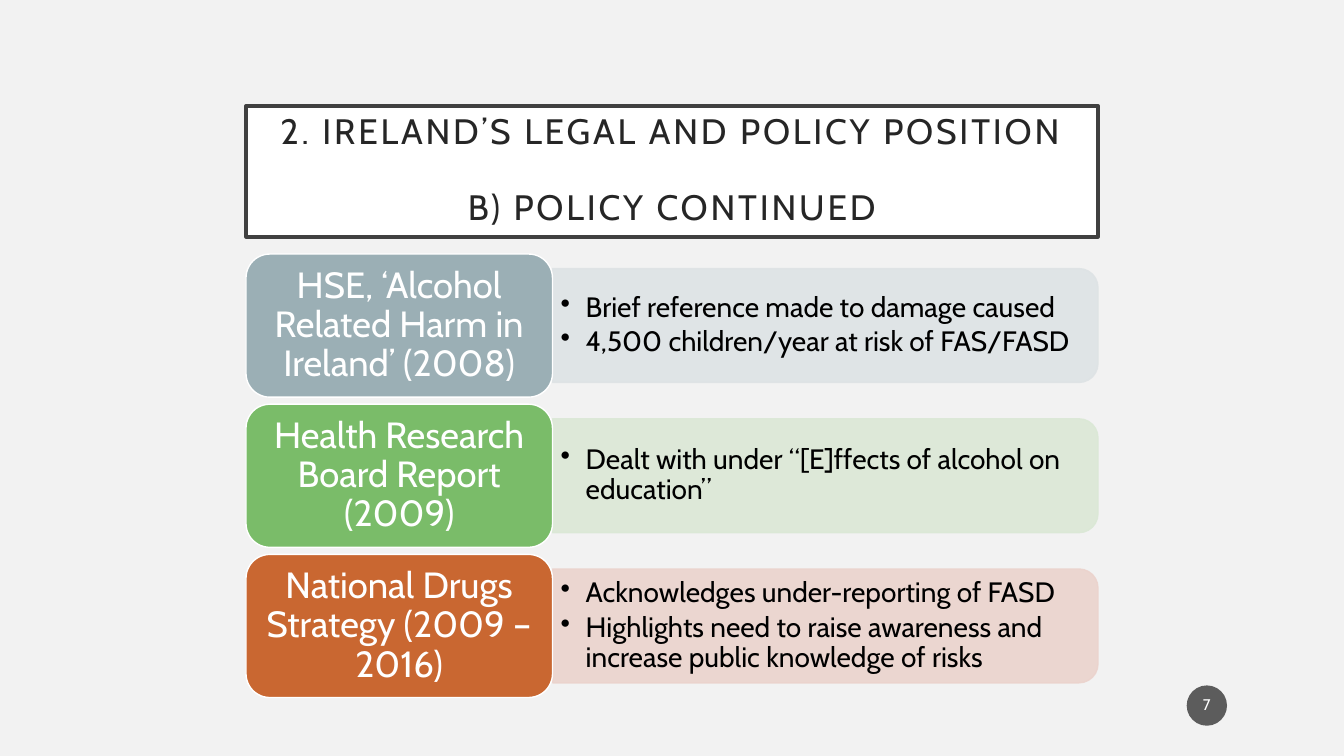
from copy import deepcopy

from pptx import Presentation
from pptx.dml.color import RGBColor
from pptx.enum.shapes import MSO_SHAPE as Shape
from pptx.enum.text import MSO_ANCHOR as Anchor, MSO_AUTO_SIZE as AutoSize, PP_ALIGN as Align
from pptx.oxml.ns import qn
from pptx.oxml.xmlchemy import OxmlElement
from pptx.util import Inches, Pt

FONT = "Cabin"
WHITE = RGBColor(0xFF, 0xFF, 0xFF)
BLACK = RGBColor(0x00, 0x00, 0x00)
BACKGROUND = RGBColor(0xF2, 0xF2, 0xF2)
TITLE_TEXT = RGBColor(0x26, 0x26, 0x26)
TITLE_BORDER = RGBColor(0x40, 0x40, 0x40)
BADGE = RGBColor(0x1D, 0x1D, 0x1D)

TITLE = "2. IRELAND’S LEGAL AND POLICY POSITION\v\vB) POLICY CONTINUED"
PAGE_NUMBER = "7"
# label, label colour, bar colour, points
POLICIES = [
    ("HSE, ‘Alcohol Related Harm in Ireland’ (2008)",
     RGBColor(0x9B, 0xAF, 0xB5), RGBColor(0xDE, 0xE3, 0xE5),
     ["Brief reference made to damage caused",
      "4,500 children/year at risk of FAS/FASD"]),
    ("Health Research Board Report (2009)",
     RGBColor(0x7A, 0xBC, 0x69), RGBColor(0xDB, 0xE8, 0xD6),
     ["Dealt with under “[E]ffects of alcohol on education”"]),
    ("National Drugs Strategy (2009 – 2016)",
     RGBColor(0xC9, 0x67, 0x31), RGBColor(0xEB, 0xD3, 0xCD),
     ["Acknowledges under-reporting of FASD",
      "Highlights need to raise awareness and increase public knowledge of risks"]),
]

LEFT, FIRST_TOP, ROW_PITCH = 2.44, 2.52, 1.49
LABEL_WIDTH, LABEL_HEIGHT = 3.04, 1.42
BAR_WIDTH, BAR_HEIGHT = 5.41, 1.13
POINTS_WIDTH, POINTS_HEIGHT = 5.36, 1.02


def set_opacity(shape, percent):
    """Make the fill and line of a painted shape partly see-through."""
    for color in shape._element.spPr.iter(qn("a:srgbClr")):
        alpha = OxmlElement("a:alpha")
        alpha.set("val", str(percent * 1000))
        color.append(alpha)


def paint(shape, fill, line=None, line_width=1):
    shape.shadow.inherit = False
    shape.fill.solid()
    shape.fill.fore_color.rgb = fill
    if line is None:
        shape.line.fill.background()
    else:
        shape.line.color.rgb = line
        shape.line.width = Pt(line_width)


def write(shape, text, size, color, margins, align=Align.CENTER, space_after=0):
    """Fill the shape with text, one paragraph per line; margins are horizontal and vertical."""
    frame = shape.text_frame
    frame.text = text
    frame.word_wrap = True
    frame.auto_size = AutoSize.NONE
    frame.vertical_anchor = Anchor.MIDDLE
    frame.margin_left = frame.margin_right = Inches(margins[0])
    frame.margin_top = frame.margin_bottom = Inches(margins[1])
    for paragraph in frame.paragraphs:
        paragraph.alignment = align
        paragraph.line_spacing = 0.9
        paragraph.space_after = Pt(space_after)
        for run in paragraph.runs:
            run.font.name = FONT
            run.font.size = Pt(size)
            run.font.color.rgb = color
    return frame.paragraphs


def add_bullet(paragraph):
    properties = paragraph._p.get_or_add_pPr()
    properties.set("marL", str(Inches(0.25)))
    properties.set("indent", str(-Inches(0.25)))
    bullet = OxmlElement("a:buChar")
    bullet.set("char", "•")
    properties.append(bullet)


def add_title(slide):
    title = slide.shapes.title
    title.left, title.top = Inches(LEFT), Inches(1.05)
    title.width, title.height = Inches(8.45), Inches(1.3)
    paint(title, WHITE, TITLE_BORDER, 2.5)
    paragraph = write(title, TITLE, 25.2, TITLE_TEXT, (0.2, 0.2))[0]
    run_properties = [run._r.get_or_add_rPr() for run in paragraph.runs]
    for properties in run_properties:
        properties.set("spc", "200")
    # Line breaks take the size of the text around them
    for line_break in paragraph._p.findall(qn("a:br")):
        line_break.append(deepcopy(run_properties[0]))


def add_policy(slide, top, label, label_color, bar_color, points):
    middle = top + LABEL_HEIGHT / 2
    bar_left = LEFT + LABEL_WIDTH

    # The bar stands upright and is turned so its round corners face right
    bar = slide.shapes.add_shape(
        Shape.ROUND_2_SAME_RECTANGLE,
        Inches(bar_left + (BAR_WIDTH - BAR_HEIGHT) / 2), Inches(middle - BAR_WIDTH / 2),
        Inches(BAR_HEIGHT), Inches(BAR_WIDTH))
    bar.rotation = 90
    paint(bar, bar_color, bar_color)
    set_opacity(bar, 90)

    points_box = slide.shapes.add_textbox(
        Inches(bar_left), Inches(middle - POINTS_HEIGHT / 2),
        Inches(POINTS_WIDTH), Inches(POINTS_HEIGHT))
    for paragraph in write(points_box, "\n".join(points), 20, BLACK, (0.08, 0.04), Align.LEFT, 3):
        add_bullet(paragraph)

    label_box = slide.shapes.add_shape(
        Shape.ROUNDED_RECTANGLE, Inches(LEFT), Inches(top),
        Inches(LABEL_WIDTH), Inches(LABEL_HEIGHT))
    paint(label_box, label_color, WHITE)
    write(label_box, label, 26, WHITE, (0.11, 0.05))


def main():
    presentation = Presentation()
    presentation.slide_width, presentation.slide_height = Inches(13.33), Inches(7.5)
    slide = presentation.slides.add_slide(presentation.slide_layouts[5])
    slide.background.fill.solid()
    slide.background.fill.fore_color.rgb = BACKGROUND

    add_title(slide)
    for row, policy in enumerate(POLICIES):
        add_policy(slide, FIRST_TOP + row * ROW_PITCH, *policy)

    badge = slide.shapes.add_shape(
        Shape.OVAL, Inches(11.77), Inches(6.8), Inches(0.4), Inches(0.4))
    paint(badge, BADGE)
    set_opacity(badge, 70)
    write(badge, PAGE_NUMBER, 11, WHITE, (0.02, 0.05))

    presentation.save("out.pptx")


if __name__ == "__main__":
    main()
